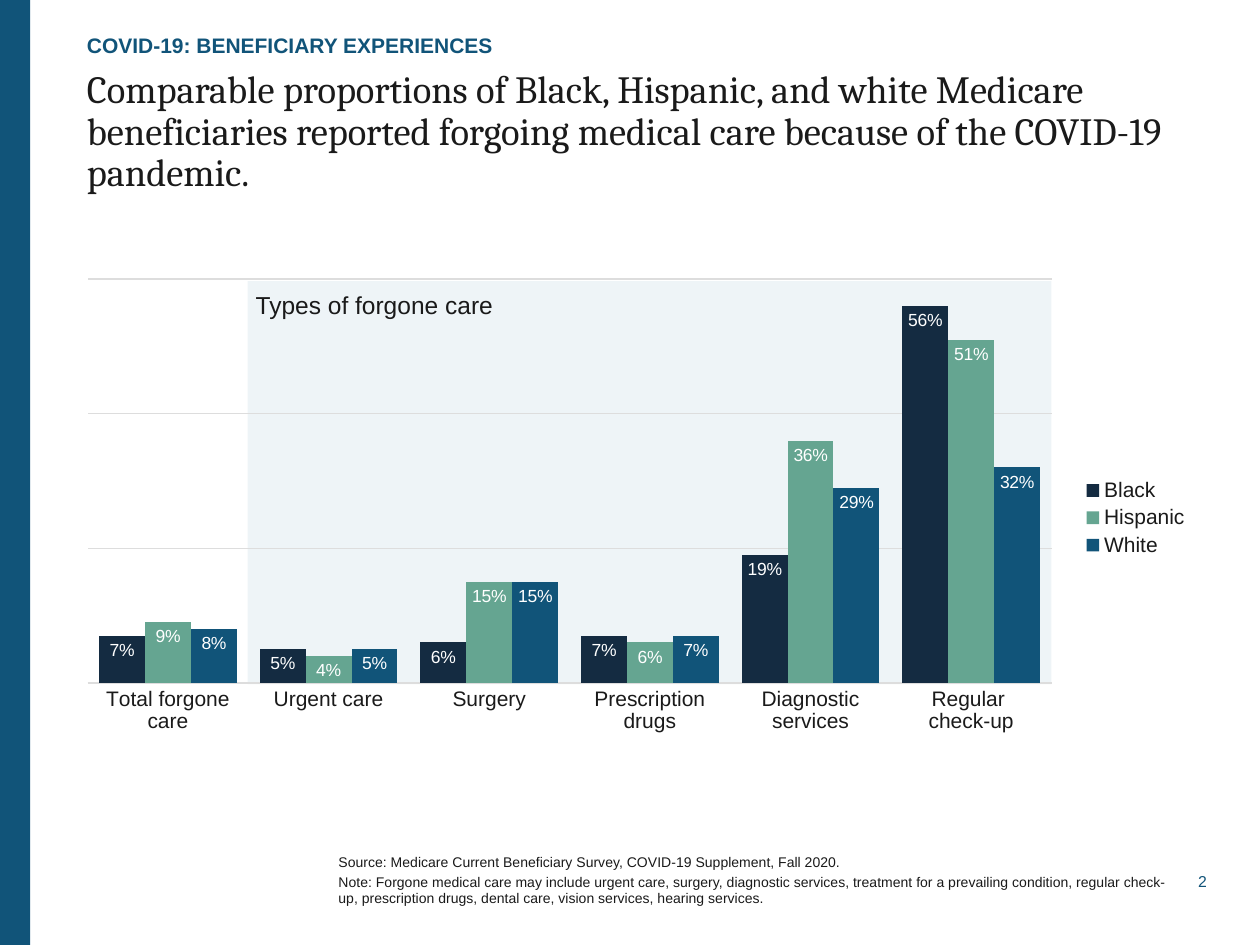
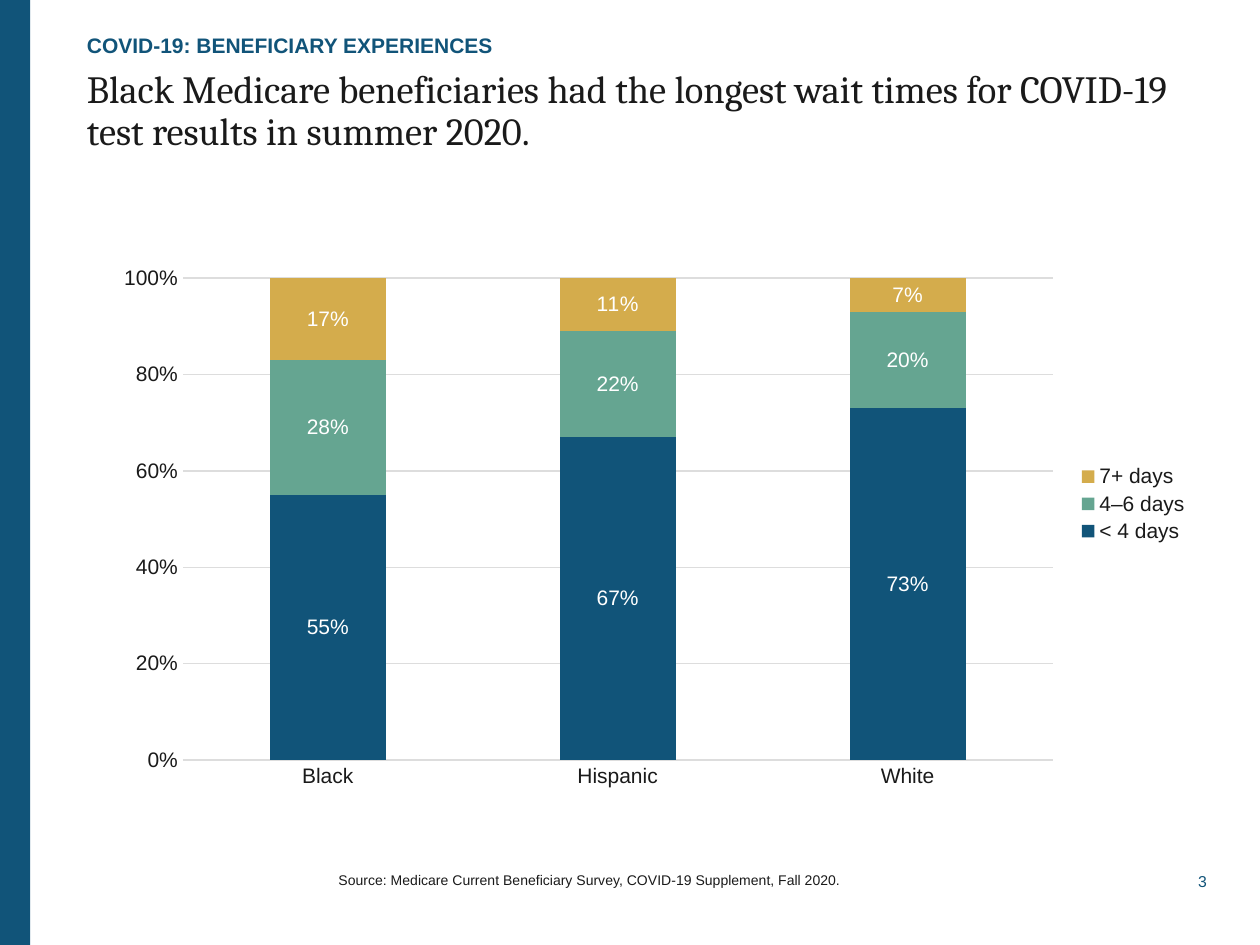
import dataclasses
import lxml.etree
import pptx
import pptx.chart.data
import pptx.dml.color
import pptx.enum.chart
import pptx.enum.shapes
import pptx.enum.text
import pptx.oxml.ns
import pptx.util

Pt = pptx.util.Pt
qn = pptx.oxml.ns.qn
Kind = pptx.enum.chart.XL_CHART_TYPE
Anchor = pptx.enum.text.MSO_ANCHOR
Align = pptx.enum.text.PP_ALIGN


@dataclasses.dataclass(frozen=True)
class Theme:
    ink: str = "1A1A1A"
    blue: str = "115479"
    navy: str = "142B41"
    green: str = "65A591"
    gold: str = "D4AC4C"
    pale: str = "D6E5ED"
    grid: str = "DDDDDD"
    white: str = "FFFFFF"
    sans: str = "Arial"
    serif: str = "Cambria"
    title: int = 22
    label: int = 14
    body: int = 12
    value: int = 10
    page: int = 9
    note: int = 8


THEME = Theme()
WIDTH, HEIGHT = 720, 540
LEFT, SPAN = 49.7, 637.2
SOURCE = "Source: Medicare Current Beneficiary Survey, COVID-19 Supplement, Fall 2020."


def color(code):
    return pptx.dml.color.RGBColor.from_string(code)


def style(font, size, code=THEME.ink, name=THEME.sans, bold=False):
    font.size = Pt(size)
    font.name = name
    font.bold = bold
    font.color.rgb = color(code)


def text(shape, lines, size=THEME.body, code=THEME.ink, name=THEME.sans, bold=False,
         align=Align.LEFT, anchor=Anchor.TOP, gap=0, lead=1.0, inset=(0, 0), wrap=True):
    frame = shape.text_frame
    frame.auto_size = pptx.enum.text.MSO_AUTO_SIZE.NONE
    frame.word_wrap = wrap
    frame.vertical_anchor = anchor
    frame.margin_left = frame.margin_right = Pt(inset[0])
    frame.margin_top = frame.margin_bottom = Pt(inset[1])
    for i, line in enumerate(lines):
        para = frame.paragraphs[0] if i == 0 else frame.add_paragraph()
        para.alignment = align
        para.line_spacing = lead
        para.space_before = Pt(gap if i else 0)
        run = para.add_run()
        run.text = line
        style(run.font, size, code, name, bold)


def place(shape, box):
    shape.left, shape.top, shape.width, shape.height = map(Pt, box)
    return shape


def label(slide, box, line, **form):
    text(slide.shapes.add_textbox(*map(Pt, box)), [line], **form)


def block(slide, box, code, alpha=None):
    rect = slide.shapes.add_shape(pptx.enum.shapes.MSO_SHAPE.RECTANGLE, *map(Pt, box))
    rect.shadow.inherit = False
    rect.fill.solid()
    rect.fill.fore_color.rgb = color(code)
    rect.line.fill.background()
    if alpha:
        tint = next(rect._element.spPr.iter(qn("a:srgbClr")))
        lxml.etree.SubElement(tint, qn("a:alpha"), val=str(alpha * 1000))


def page(deck, number, title, notes):
    slide = deck.slides.add_slide(deck.slide_layouts.get_by_name("Comparison"))
    block(slide, (0, 0, 17.3, HEIGHT), THEME.blue)
    label(slide, (667.4, 495.4, 22.3, 15.8), str(number), size=THEME.page,
          code=THEME.blue, align=Align.RIGHT, anchor=Anchor.MIDDLE, wrap=False)
    slots = {slot.placeholder_format.idx: slot for slot in slide.placeholders}
    text(place(slots[0], (LEFT, 40.3, SPAN, 57.6)), [title],
         size=THEME.title, name=THEME.serif, lead=0.9)
    text(place(slots[1], (LEFT, 13.7, 623.5, 19.4)), ["COVID-19: BENEFICIARY EXPERIENCES"],
         code=THEME.blue, bold=True, anchor=Anchor.BOTTOM)
    text(place(slots[3], (193.4, 472.3, 474.5, 61.2)), notes,
         size=THEME.note, anchor=Anchor.MIDDLE, gap=1.6)
    for idx in (2, 4):
        slots[idx]._element.getparent().remove(slots[idx]._element)
    return slide


def layout(chart, plot):
    space = chart._chartSpace
    area = space.chart.plotArea
    for old in area.findall(qn("c:layout")):
        area.remove(old)
    spot = lxml.etree.Element(qn("c:layout"))
    area.insert(0, spot)
    manual = lxml.etree.SubElement(spot, qn("c:manualLayout"))
    parts = [("layoutTarget", "inner"), ("xMode", "edge"), ("yMode", "edge")]
    for tag, val in parts + list(zip("xywh", plot)):
        lxml.etree.SubElement(manual, qn("c:" + tag), val=str(val))
    clear = lxml.etree.SubElement(area, qn("c:spPr"))
    lxml.etree.SubElement(clear, qn("a:noFill"))
    clear = lxml.etree.Element(qn("c:spPr"))
    lxml.etree.SubElement(clear, qn("a:noFill"))
    lxml.etree.SubElement(lxml.etree.SubElement(clear, qn("a:ln")), qn("a:noFill"))
    space.chart.addnext(clear)


def rule(line):
    line.color.rgb = color(THEME.grid)
    line.width = Pt(0.75)


def graph(slide, kind, box, plot, cats, rows, gap, size, top):
    data = pptx.chart.data.CategoryChartData(number_format="0%")
    data.categories = cats
    for name, code, vals in rows:
        data.add_series(name, [val / 100 for val in vals])
    chart = slide.shapes.add_chart(kind, *map(Pt, box), data).chart
    chart.has_title = False
    style(chart.font, THEME.value)
    chart.has_legend = True
    chart.legend.position = pptx.enum.chart.XL_LEGEND_POSITION.RIGHT
    chart.legend.include_in_layout = False
    style(chart.legend.font, THEME.body)

    bars = chart.plots[0]
    bars.gap_width = gap
    bars.vary_by_categories = False
    for item, (name, code, vals) in zip(bars.series, rows):
        item.invert_if_negative = False
        item.format.fill.solid()
        item.format.fill.fore_color.rgb = color(code)
        tags = item.data_labels
        tags.show_value = True
        tags.number_format = "0%"
        tags.number_format_is_linked = False
        style(tags.font, size, THEME.white)
        if kind == Kind.COLUMN_CLUSTERED:
            tags.position = pptx.enum.chart.XL_LABEL_POSITION.INSIDE_END

    for axis in (chart.category_axis, chart.value_axis):
        axis.major_tick_mark = axis.minor_tick_mark = pptx.enum.chart.XL_TICK_MARK.NONE
        style(axis.tick_labels.font, THEME.body)
    rule(chart.category_axis.format.line)
    scale = chart.value_axis
    scale.minimum_scale, scale.maximum_scale, scale.major_unit = 0, top, 0.2
    scale.has_major_gridlines = True
    rule(scale.major_gridlines.format.line)
    scale.format.line.fill.background()
    scale.tick_labels.number_format = "0%"
    scale.tick_labels.number_format_is_linked = False
    layout(chart, plot)
    return chart


def forgone(deck):
    slide = page(
        deck, 2,
        "Comparable proportions of Black, Hispanic, and white Medicare beneficiaries "
        "reported forgoing medical care because of the COVID-19 pandemic.",
        [SOURCE,
         "Note: Forgone medical care may include urgent care, surgery, diagnostic services, "
         "treatment for a prevailing condition, regular check-up, prescription drugs, "
         "dental care, vision services, hearing services."])
    cats = ["Total forgone care", "Urgent care", "Surgery", "Prescription drugs",
            "Diagnostic services", "Regular \ncheck-up"]
    rows = [("Black", THEME.navy, (7, 5, 6, 7, 19, 56)),
            ("Hispanic", THEME.green, (9, 4, 15, 6, 36, 51)),
            ("White", THEME.blue, (8, 5, 15, 7, 29, 32))]
    share = 0.865
    step = SPAN * share / len(cats)
    block(slide, (LEFT + step, 160.6, step * (len(cats) - 1), 230.4), THEME.pale, alpha=40)
    chart = graph(slide, Kind.COLUMN_CLUSTERED, (LEFT, 130.3, SPAN, 331.2),
                  (0, 0.088, share, 0.697), cats, rows, 50, THEME.value, 0.6)
    chart.value_axis.visible = False
    label(slide, (139, 162, 182.9, 24.5), "Types of forgone care",
          size=THEME.label, inset=(7.2, 3.6))


def waits(deck):
    slide = page(
        deck, 3,
        "Black Medicare beneficiaries had the longest wait times for COVID-19 "
        "test results in summer 2020.", [SOURCE])
    rows = [("< 4 days", THEME.blue, (55, 67, 73)),
            ("4–6 days", THEME.green, (28, 22, 20)),
            ("7+ days", THEME.gold, (17, 11, 7))]
    chart = graph(slide, Kind.COLUMN_STACKED_100, (LEFT, 114.5, SPAN, 347),
                  (0.086, 0.128, 0.78, 0.794), ["Black", "Hispanic", "White"],
                  rows, 150, THEME.body, 1)
    chart.plots[0].overlap = 100


def main():
    deck = pptx.Presentation()
    deck.slide_width, deck.slide_height = Pt(WIDTH), Pt(HEIGHT)
    forgone(deck)
    waits(deck)
    deck.save("out.pptx")


if __name__ == "__main__":
    main()
